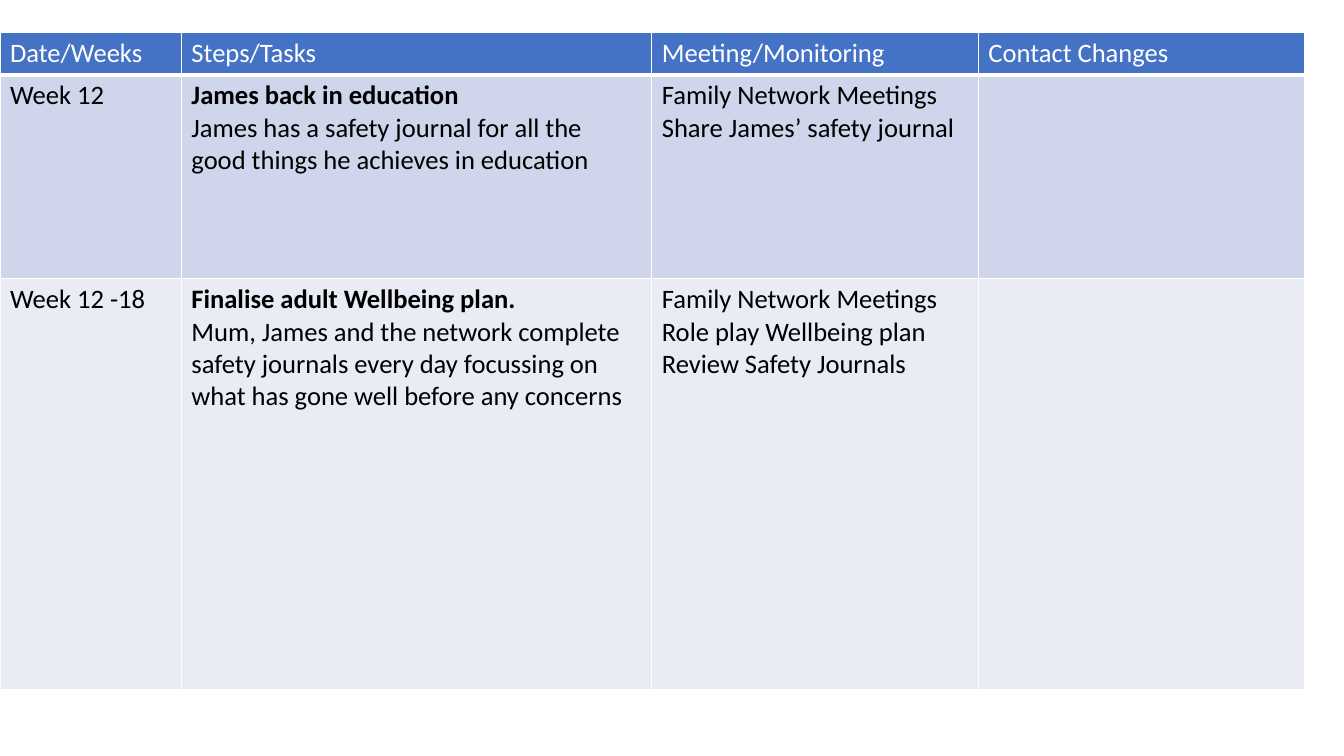
from dataclasses import dataclass

from lxml.etree import SubElement
from pptx import Presentation
from pptx.dml.color import RGBColor
from pptx.oxml.ns import qn
from pptx.util import Emu, Inches, Pt

WHITE, BLACK = "FFFFFF", "000000"
COLUMN_PERCENTS = (13.5, 35, 24.3, 24.3)
TOP_PERCENT = 4.27


@dataclass(frozen=True)
class PlanRow:
    """One row of the plan; a line marked with * is bold."""

    height_percent: float
    fill: str
    color: str
    cells: tuple[str, ...]
    bottom_border: float = 1


PLAN = (
    PlanRow(5.6, "4472C4", WHITE,
            ("Date/Weeks", "Steps/Tasks", "Meeting/Monitoring", "Contact Changes"), 3),
    PlanRow(27, "CFD5EA", BLACK, (
        "Week 12",
        "*James back in education\n"
        "James has a safety journal for all the good things he achieves in education",
        "Family Network Meetings\nShare James’ safety journal",
        "")),
    PlanRow(54.4, "E9EBF5", BLACK, (
        "Week 12 -18",
        "*Finalise adult Wellbeing plan.\n"
        "Mum, James and the network complete safety journals every day "
        "focussing on what has gone well before any concerns",
        "Family Network Meetings\nRole play Wellbeing plan\nReview Safety Journals",
        "")),
)


def rgb(color: str) -> RGBColor:
    """Turn a hex string into a colour."""
    return RGBColor.from_string(color)


def share(whole: int, percent: float) -> Emu:
    """Return a percentage of a slide dimension."""
    return Emu(round(whole * percent / 100))


def write_text(paragraph, text: str, *, color: str, bold: bool = False,
               size: float = 19, name: str = "Calibri") -> None:
    """Add one formatted run to a paragraph."""
    run = paragraph.add_run()
    run.text = text
    font = run.font
    font.name, font.size, font.bold = name, Pt(size), bold
    font.color.rgb = rgb(color)


def add_borders(cell, bottom: float) -> None:
    """Draw white lines around a cell."""
    properties = cell._tc.get_or_add_tcPr()
    for side, width in (("L", 1), ("R", 1), ("T", 1), ("B", bottom)):
        line = SubElement(properties, qn(f"a:ln{side}"), w=str(Pt(width)))
        SubElement(SubElement(line, qn("a:solidFill")), qn("a:srgbClr"), val=WHITE)


def fill_cell(cell, text: str, row: PlanRow) -> None:
    """Give a cell its borders, fill and lines of text."""
    add_borders(cell, row.bottom_border)
    cell.fill.solid()
    cell.fill.fore_color.rgb = rgb(row.fill)
    frame = cell.text_frame
    for index, line in enumerate(text.splitlines()):
        paragraph = frame.add_paragraph() if index else frame.paragraphs[0]
        write_text(paragraph, line.removeprefix("*"),
                   color=row.color, bold=line.startswith("*"))


def main() -> None:
    """Build the slide with the plan table."""
    presentation = Presentation()
    presentation.slide_width, presentation.slide_height = Inches(13.33), Inches(7.5)
    slide = presentation.slides.add_slide(presentation.slide_layouts[6])
    widths = [share(presentation.slide_width, percent) for percent in COLUMN_PERCENTS]
    heights = [share(presentation.slide_height, row.height_percent) for row in PLAN]
    top = share(presentation.slide_height, TOP_PERCENT)
    table = slide.shapes.add_table(len(PLAN), len(widths), 0, top,
                                   sum(widths), sum(heights)).table
    for column, width in zip(table.columns, widths):
        column.width = width
    for table_row, height, row in zip(table.rows, heights, PLAN):
        table_row.height = height
        for cell, text in zip(table_row.cells, row.cells):
            fill_cell(cell, text, row)
    presentation.save("out.pptx")


if __name__ == "__main__":
    main()
